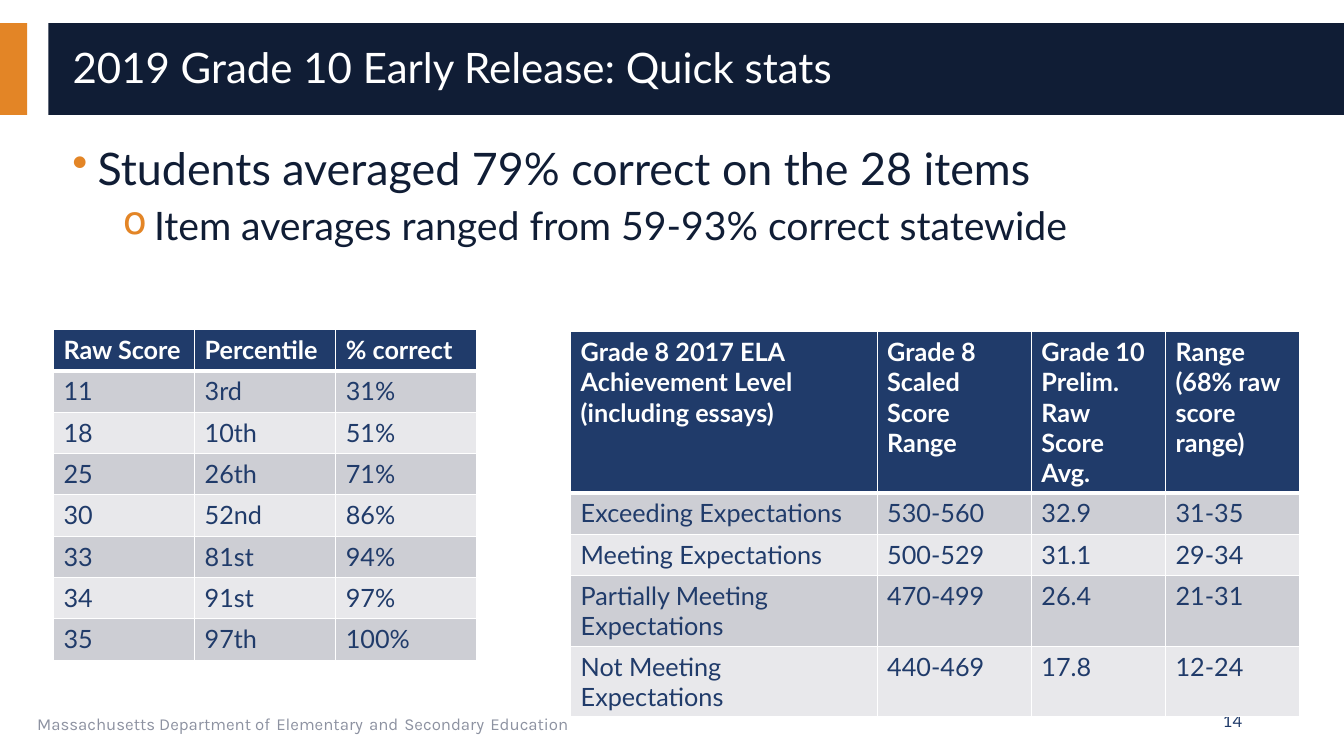
import pptx
import pptx.util
import pptx.dml.color
import pptx.enum.shapes
import pptx.enum.text
import pptx.oxml
import pptx.oxml.ns
from lxml import etree

Inches = pptx.util.Inches
Pt = pptx.util.Pt

# Content
TITLE = "2019 Grade 10 Early Release: Quick stats"
FOOTER = ["Massachusetts Department of", "Elementary", "and", "Secondary", "Education"]
PAGE_NUMBER = "14"
# text, size, bullet, left margin, hanging indent, space before
BULLETS = [
    ("Students averaged 79% correct on the 28 items", 32, "•", 0.25, 0.25, 0),
    ("Item averages ranged from 59-93% correct statewide", 28, "o", 0.81, 0.31, 5),
]
PERCENTILES = [
    ("Raw Score", "Percentile", "% correct"),
    ("11", "3rd", "31%"),
    ("18", "10th", "51%"),
    ("25", "26th", "71%"),
    ("30", "52nd", "86%"),
    ("33", "81st", "94%"),
    ("34", "91st", "97%"),
    ("35", "97th", "100%"),
]
LEVELS = [
    ("Grade 8 2017 ELA Achievement Level\n(including essays)", "Grade 8 Scaled Score Range",
     "Grade 10 Prelim. Raw Score Avg.", "Range\n(68% raw score range)"),
    ("Exceeding Expectations", "530-560", "32.9", "31-35"),
    ("Meeting Expectations", "500-529", "31.1", "29-34"),
    ("Partially Meeting Expectations", "470-499", "26.4", "21-31"),
    ("Not Meeting Expectations", "440-469", "17.8", "12-24"),
]

# Palette
ORANGE, NAVY, BLUE, WHITE, GREY = "E38526", "101D35", "203B6A", "FFFFFF", "8D92A1"
BANDS = ("CDCED4", "E8E8EB")


def color(value):
    return pptx.dml.color.RGBColor.from_string(value)


def style(span, size, ink, name="Lato", bold=False):
    span.font.size = Pt(size)
    span.font.name = name
    span.font.bold = bold
    span.font.color.rgb = color(ink)


def add_bar(page, left, width, fill):
    bar = page.shapes.add_shape(pptx.enum.shapes.MSO_SHAPE.RECTANGLE,
                                Inches(left), Inches(0.23), Inches(width), Inches(0.91))
    bar.shadow.inherit = False
    bar.fill.solid()
    bar.fill.fore_color.rgb = color(fill)
    bar.line.fill.background()


def add_text_box(page, left, top, width, height):
    box = page.shapes.add_textbox(Inches(left), Inches(top), Inches(width), Inches(height))
    box.text_frame.word_wrap = True
    return box.text_frame


def add_bullet(para, symbol, margin, hanging):
    properties = para._p.get_or_add_pPr()
    properties.set("marL", str(Inches(margin)))
    properties.set("indent", str(-Inches(hanging)))
    namespace = pptx.oxml.ns.nsdecls("a")
    for xml in (f'<a:buClr {namespace}><a:srgbClr val="{ORANGE}"/></a:buClr>',
                f'<a:buChar {namespace} char="{symbol}"/>'):
        properties.append(pptx.oxml.parse_xml(xml))


def add_borders(cell, bottom):
    properties = cell._tc.get_or_add_tcPr()
    for side, width in (("L", 1), ("R", 1), ("T", 1), ("B", bottom)):
        line = etree.SubElement(properties, pptx.oxml.ns.qn("a:ln" + side), w=str(Pt(width)))
        fill = etree.SubElement(line, pptx.oxml.ns.qn("a:solidFill"))
        etree.SubElement(fill, pptx.oxml.ns.qn("a:srgbClr"), val=WHITE)


def add_score_table(page, rows, left, top, widths, heights):
    frame = page.shapes.add_table(len(rows), len(widths), Inches(left), Inches(top),
                                  Inches(sum(widths)), Inches(sum(heights)))
    table = frame.table
    for column, width in zip(table.columns, widths):
        column.width = Inches(width)
    for index, (values, height) in enumerate(zip(rows, heights)):
        table.rows[index].height = Inches(height)
        header = index == 0
        for cell, value in zip(table.rows[index].cells, values):
            add_borders(cell, 3 if header else 1)
            cell.fill.solid()
            cell.fill.fore_color.rgb = color(BLUE if header else BANDS[(index - 1) % 2])
            cell.text_frame.text = value
            for para in cell.text_frame.paragraphs:
                style(para.runs[0], 18, WHITE if header else BLUE, bold=header)


def main():
    deck = pptx.Presentation()
    deck.slide_width, deck.slide_height = Inches(13.33), Inches(7.5)
    page = deck.slides.add_slide(deck.slide_layouts[5])

    # Title band
    add_bar(page, 0, 0.27, ORANGE)
    add_bar(page, 0.48, 12.85, NAVY)
    title = page.shapes.title
    title.left, title.top = Inches(0.62), Inches(0.32)
    title.width, title.height = Inches(12.44), Inches(0.74)
    title.text_frame.text = TITLE
    title.text_frame.vertical_anchor = pptx.enum.text.MSO_ANCHOR.MIDDLE
    para = title.text_frame.paragraphs[0]
    para.alignment = pptx.enum.text.PP_ALIGN.LEFT
    para.line_spacing = 0.9
    style(para.runs[0], 30, WHITE)
    # Keep the title in front of its band
    page.shapes._spTree.append(title._element)

    # Footer, with wider spaces between its parts
    para = add_text_box(page, 0.27, 6.95, 8.44, 0.4).paragraphs[0]
    for index, words in enumerate(FOOTER):
        if index:
            space = para.add_run()
            space.text = " "
            style(space, 18, BLUE, "Karla")
        span = para.add_run()
        span.text = words
        style(span, 12, GREY, "Karla")

    # Key points
    frame = add_text_box(page, 0.62, 1.35, 12.44, 1.4)
    frame.text = "\n".join(item[0] for item in BULLETS)
    for level, (para, item) in enumerate(zip(frame.paragraphs, BULLETS)):
        words, size, symbol, margin, hanging, before = item
        para.level = level
        add_bullet(para, symbol, margin, hanging)
        para.space_before = Pt(before)
        style(para.runs[0], size, NAVY)

    # Page number
    frame = add_text_box(page, 9.42, 6.95, 3, 0.4)
    frame.text = PAGE_NUMBER
    frame.vertical_anchor = pptx.enum.text.MSO_ANCHOR.MIDDLE
    frame.paragraphs[0].alignment = pptx.enum.text.PP_ALIGN.RIGHT
    style(frame.paragraphs[0].runs[0], 12, BLUE)

    # Score tables
    add_score_table(page, PERCENTILES, 0.53, 3.27, [1.4] * 3, [0.41] * len(PERCENTILES))
    add_score_table(page, LEVELS, 5.66, 3.29, [3.04, 1.53, 1.33, 1.33],
                    [1.6, 0.41, 0.41, 0.7, 0.7])

    deck.save("out.pptx")


if __name__ == "__main__":
    main()
